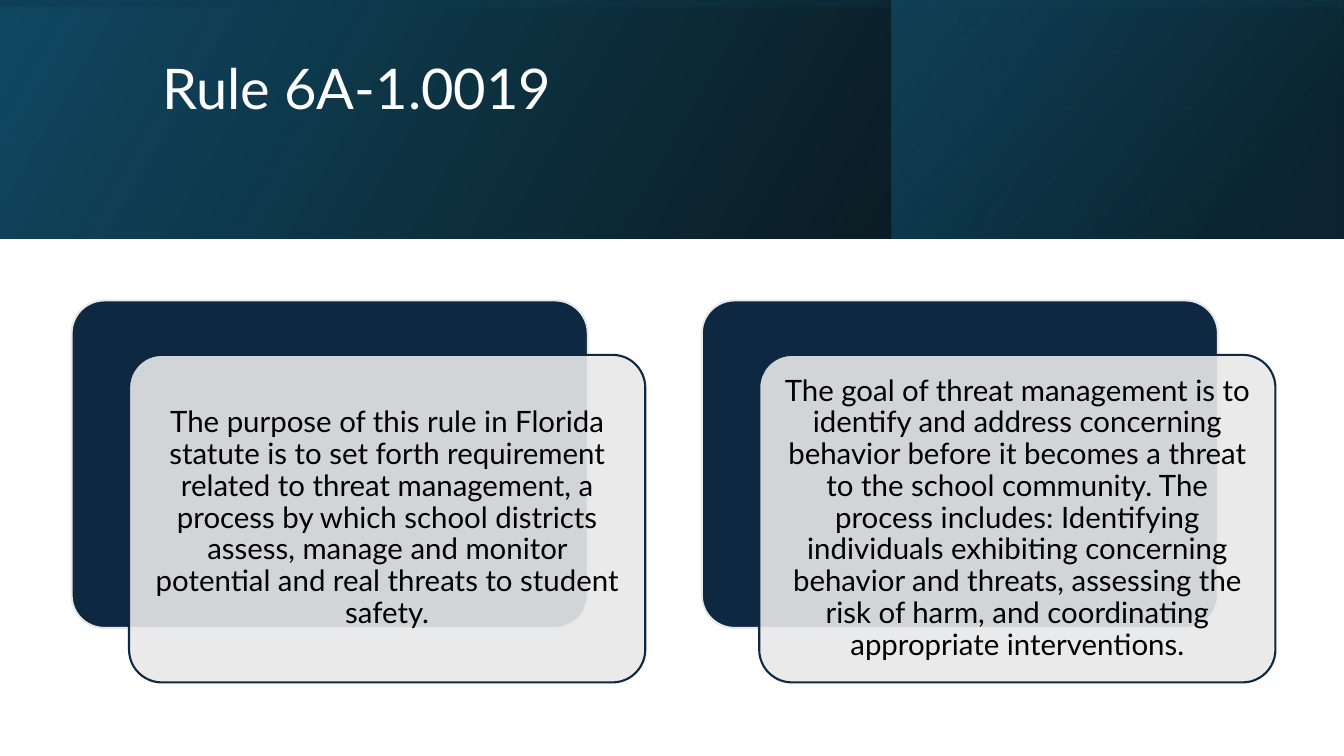
from lxml import etree
from pptx import Presentation
from pptx.dml.color import RGBColor
from pptx.enum.shapes import MSO_SHAPE as SHAPE
from pptx.enum.text import MSO_ANCHOR as ANCHOR, PP_ALIGN as ALIGN
from pptx.oxml.ns import qn
from pptx.util import Inches, Pt

COLORS = {
    "navy": "0E2841", "teal": "104862", "deep": "0B3041", "blue": "156082",
    "mist": "E8E8E8", "white": "FFFFFF", "black": "000000",
}
FONT = "Lato"
CARDS = [
    "The purpose of this rule in Florida statute is to set forth requirement "
    "related to threat management, a process by which school districts assess, "
    "manage and monitor potential and real threats to student safety.",
    "The goal of threat management is to identify and address concerning behavior "
    "before it becomes a threat to the school community. The process includes: "
    "Identifying individuals exhibiting concerning behavior and threats, assessing "
    "the risk of harm, and coordinating appropriate interventions.",
]


def rgb(name):
    """Return the palette colour as an RGBColor."""
    return RGBColor.from_string(COLORS[name])


def set_alpha(clr, percent):
    """Give a colour element an opacity in percent."""
    etree.SubElement(clr, qn("a:alpha")).set("val", str(percent * 1000))


def add_run(p, text, size, color):
    """Add one formatted run to a paragraph."""
    r = p.add_run()
    r.text = text
    r.font.name, r.font.size = FONT, Pt(size)
    r.font.color.rgb = rgb(color)


def add_gradient_panel(s, box, stops, angle, rotation=0):
    """Add a mirrored rectangle with a translucent linear gradient."""
    sp = s.shapes.add_shape(SHAPE.RECTANGLE, *map(Inches, box))
    sp.shadow.inherit = False
    sp.line.fill.background()
    sp.rotation = rotation
    spPr = sp._element.spPr
    spPr.find(qn("a:xfrm")).set("flipH", "1")
    grad = etree.Element(qn("a:gradFill"), rotWithShape="1")
    gs_lst = etree.SubElement(grad, qn("a:gsLst"))
    for pos, color, alpha in stops:
        gs = etree.SubElement(gs_lst, qn("a:gs"), pos=str(pos * 1000))
        set_alpha(etree.SubElement(gs, qn("a:srgbClr"), val=COLORS[color]), alpha)
    etree.SubElement(grad, qn("a:lin"), ang=str(angle * 60000), scaled="0")
    spPr.find(qn("a:prstGeom")).addnext(grad)


def add_banner(s, w, h):
    """Layer the gradient panels of the top banner."""
    add_gradient_panel(s, (0, 0, w, h), [(0, "black", 96), (100, "teal", 100)], 330)
    add_gradient_panel(s, (8.84, 0, w - 8.85, h),
                       [(19, "deep", 68), (100, "blue", 48)], 320)
    add_gradient_panel(s, ((w - h) / 2, (h - w) / 2, h, w),
                       [(23, "teal", 16), (99, "black", 45)], 350, 270)


def add_title(s, box, text):
    """Place the title above the banner, with a line break after it."""
    title = s.shapes.title
    s.shapes._spTree.append(title._element)
    title.left, title.top, title.width, title.height = map(Inches, box)
    tf = title.text_frame
    tf.vertical_anchor = ANCHOR.MIDDLE
    p = tf.paragraphs[0]
    p.alignment, p.line_spacing = ALIGN.LEFT, 0.9
    add_run(p, text, 40, "white")
    p.add_line_break()
    etree.SubElement(p._p.find(qn("a:br")), qn("a:rPr"), sz="4000")


def add_plate(s, box, fill, line):
    """Add one rounded plate of a card."""
    sp = s.shapes.add_shape(SHAPE.ROUNDED_RECTANGLE, *map(Inches, box))
    sp.adjustments[0] = 0.1
    sp.shadow.inherit = False
    sp.fill.solid()
    sp.fill.fore_color.rgb = rgb(fill)
    sp.line.color.rgb = rgb(line)
    sp.line.width = Pt(1.5)
    return sp


def add_card(s, box, text):
    """Add a dark plate, a shifted translucent plate and the text on it."""
    x, y, w, h = box
    add_plate(s, box, "navy", "mist")
    x, y = x + 0.57, y + 0.54
    front = add_plate(s, (x, y, w, h), "mist", "navy")
    fill = front._element.spPr.find(qn("a:solidFill"))
    set_alpha(fill.find(qn("a:srgbClr")), 90)
    pad = 0.1
    text_box = (x + pad, y + pad, w - 2 * pad, h - 2 * pad)
    tf = s.shapes.add_textbox(*map(Inches, text_box)).text_frame
    tf.word_wrap = True
    tf.vertical_anchor = ANCHOR.MIDDLE
    tf.margin_left = tf.margin_right = tf.margin_top = tf.margin_bottom = Inches(0.09)
    p = tf.paragraphs[0]
    p.alignment, p.line_spacing = ALIGN.CENTER, 0.9
    add_run(p, text, 21, "black")


def main():
    """Build the slide and save it."""
    prs = Presentation()
    prs.slide_width, prs.slide_height = Inches(13.33), Inches(7.5)
    s = prs.slides.add_slide(prs.slide_layouts[5])
    add_banner(s, 13.33, 2.37)
    add_title(s, (1.51, 0.38, 10.63, 1.72), "Rule 6A-1.0019")
    for i, text in enumerate(CARDS):
        add_card(s, (0.71 + 6.25 * i, 2.98, 5.12, 3.25), text)
    prs.save("out.pptx")


if __name__ == "__main__":
    main()
